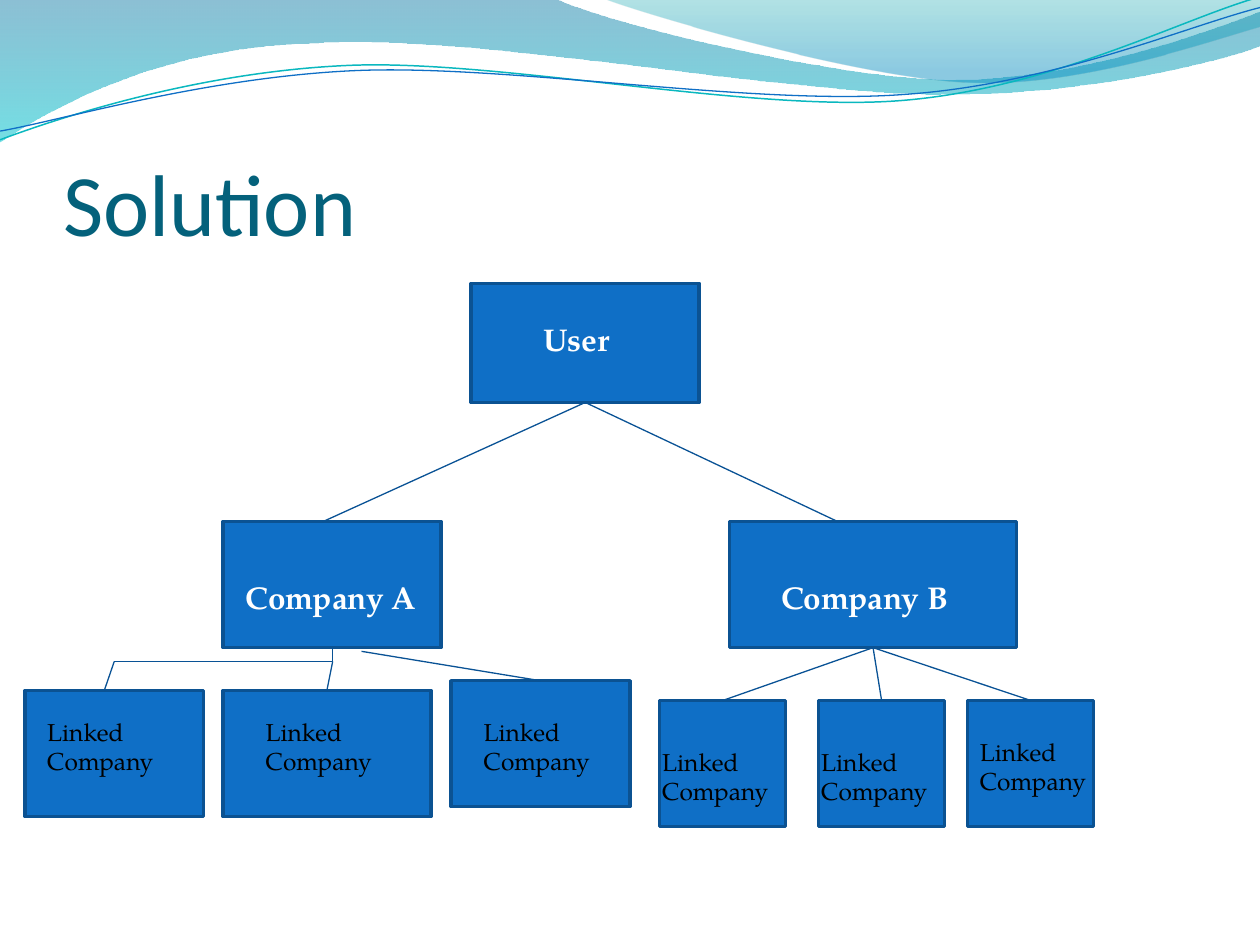
from lxml.etree import SubElement
from pptx import Presentation
from pptx.dml.color import RGBColor
from pptx.enum.shapes import MSO_CONNECTOR, MSO_SHAPE
from pptx.enum.text import MSO_ANCHOR, MSO_AUTO_SIZE, PP_ALIGN
from pptx.oxml.ns import qn
from pptx.util import Pt

BLUE = RGBColor(0x0F, 0x6F, 0xC6)
BOX_EDGE = RGBColor(0x0B, 0x52, 0x92)
LINK = RGBColor(0x09, 0x52, 0x95)
TEAL = RGBColor(0x0A, 0xB8, 0xBF)
TITLE_COLOR = RGBColor(0x04, 0x61, 0x7B)
WHITE = RGBColor(0xFF, 0xFF, 0xFF)
BLACK = RGBColor(0, 0, 0)
DEEP_SEA, AQUA = RGBColor(0, 0x74, 0xA1), RGBColor(0, 0xC6, 0xCF)
LAGOON, SKY = RGBColor(0, 0xA1, 0xA9), RGBColor(0, 0x8B, 0xBF)

TOP, BOTTOM = 0, 2

# Outlines: a start point, then one point for a line or three for a curve.
# Gradient stops: position, colour, opacity in percent.
BANDS = [
    ([(0, 0),
      [(317.2, -0.7)],
      [(342.7, 12.2), (478.1, 45.4), (545.8, 45.4)],
      [(614.2, 45.4), (689.8, 18.7), (720, 6.5)],
      [(720.7, 25.9)],
      [(707.8, 31.7), (626.4, 54.7), (537.1, 54)],
      [(447.8, 54), (275, 20.2), (185, 24.5)],
      [(92.9, 25.9), (33.1, 59.8), (-0.7, 81.4)]],
     [(0, DEEP_SEA, 45), (1, AQUA, 55)]),
    ([(344.9, -0.7),
      [(366.5, 7.9), (491, 44.6), (553.7, 46.8)],
      [(616.3, 49.7), (691.9, 23), (720, 15.1)],
      [(720, 0)]],
     [(0, LAGOON, 30), (0.8, SKY, 45)]),
]
WAVES = [
    ([(0, 79.9),
      [(34.6, 67), (113.8, 41), (199.4, 37.4)],
      [(284.4, 33.8), (427, 64.1), (513.4, 57.6)],
      [(599.8, 51.1), (675.4, 10.8), (718.6, -1.4)]], TEAL, 0.85),
    ([(0, 74.9),
      [(33.8, 69.1), (118.1, 43.9), (203.8, 40.3)],
      [(290.2, 36.7), (429.8, 60.5), (516.2, 54)],
      [(601.9, 48.2), (677.5, 15.1), (720, 4.3)]], BLUE, 0.75),
]

HEAD = {"size": Pt(18), "bold": True}
LEAF = {"size": Pt(14), "bold": False}
LINKED = "Linked Company"
# name: box, text, label frame
NODES = {
    "user": ((269.3, 162, 130.3, 68), "User", (303.3, 179.3, 73.4, 28.8)),
    "A": ((127.4, 298.1, 124.6, 72), "Company A", (133.2, 326.9, 130.3, 28.8)),
    "B": ((416.8, 298.1, 164.2, 72), "Company B", (439.2, 326.9, 118.8, 28.8)),
    "A1": ((14.2, 394.6, 102.2, 72), LINKED, (19.9, 406.1, 85, 41)),
    "A2": ((127.4, 394.6, 118.8, 72), LINKED, (144.7, 406.1, 85, 41)),
    "A3": ((257.8, 389, 102.2, 72), LINKED, (269.3, 406.1, 85, 41)),
    "B1": ((377, 400.3, 72, 72), LINKED, (371.3, 423.2, 85, 41)),
    "B2": ((467.8, 400.3, 72, 72), LINKED, (462.2, 423.2, 85, 41)),
    "B3": ((553, 400.3, 72, 72), LINKED, (552.8, 417.4, 85, 41)),
}
# Each end is a node name (bottom at the start, top at the end) or a free point.
LINKS = [
    ("user", (184.5, 298.1)), ("user", (478.8, 298.1)),
    ((190.1, 378), "A2"), ((206.6, 372.2), "A3"), ((65.3, 378), (59.6, 394.6)),
    ("B", "B1"), ("B", "B2"), ("B", "B3"),
]
ELBOW_START, ELBOW_END = (190.1, 370.1), (65.3, 378)


def add_outline(slide, outline, close):
    """Draw straight segments through all points, then turn each triple into a curve."""
    start, *segments = outline
    builder = slide.shapes.build_freeform(*map(Pt, start))
    points = [(Pt(x), Pt(y)) for segment in segments for x, y in segment]
    builder.add_line_segments(points, close=close)
    shape = builder.convert_to_shape()
    shape.shadow.inherit = False

    lines = iter(list(shape.element.spPr.iter(qn("a:lnTo"))))
    for segment in segments:
        parts = [next(lines) for _ in segment]
        if len(parts) == 3:
            outline_path = parts[0].getparent()
            curve = SubElement(outline_path, qn("a:cubicBezTo"))
            outline_path.replace(parts[0], curve)
            for part in parts:
                curve.append(part[0])
            for part in parts[1:]:
                outline_path.remove(part)
    return shape


def set_line(shape, color, width):
    shape.line.color.rgb = color
    shape.line.width = Pt(width)


def add_band(slide, outline, stops):
    band = add_outline(slide, outline, True)
    band.line.fill.background()
    band.fill.gradient()
    band.fill.gradient_angle = 270
    for stop, (position, color, _) in zip(band.fill.gradient_stops, stops):
        stop.position = position
        stop.color.rgb = color
    colors = list(band.element.spPr.iter(qn("a:srgbClr")))
    for color, (_, _, opacity) in zip(colors, stops):
        SubElement(color, qn("a:alpha"), val=str(opacity * 1000))


def add_link(slide, kind, start, end):
    link = slide.shapes.add_connector(kind, *map(Pt, start + end))
    set_line(link, LINK, 0.75)
    SubElement(link.element.spPr, qn("a:effectLst"))
    return link


def add_elbow(slide, start, end):
    """Go down from start, then left to end: a two-part elbow turned by 90 degrees."""
    middle_x, middle_y = (start[0] + end[0]) / 2, (start[1] + end[1]) / 2
    half_width, half_height = (end[1] - start[1]) / 2, (start[0] - end[0]) / 2
    elbow = add_link(slide, MSO_CONNECTOR.ELBOW,
                     (middle_x - half_width, middle_y - half_height),
                     (middle_x + half_width, middle_y + half_height))
    elbow.element.spPr.find(qn("a:prstGeom")).set("prst", "bentConnector2")
    elbow.element.spPr.find(qn("a:xfrm")).set("rot", str(90 * 60000))


def add_box(slide, frame):
    box = slide.shapes.add_shape(MSO_SHAPE.RECTANGLE, *map(Pt, frame))
    box.shadow.inherit = False
    box.fill.solid()
    box.fill.fore_color.rgb = BLUE
    set_line(box, BOX_EDGE, 2)
    return box


def write(frame, text, color, formats):
    frame.word_wrap = True
    para = frame.paragraphs[0]
    para.alignment = PP_ALIGN.LEFT
    span = para.add_run()
    span.text = text
    span.font.color.rgb = color
    for name, value in formats.items():
        setattr(span.font, name, value)


def add_title(slide, text):
    title = slide.shapes.title
    slide.shapes.element.append(title.element)
    title.left, title.top, title.width, title.height = map(Pt, (36, 55.4, 648, 90))
    frame = title.text_frame
    layout = {"margin_left": 0, "margin_top": Pt(3.6), "margin_right": 0, "margin_bottom": 0,
              "vertical_anchor": MSO_ANCHOR.BOTTOM, "auto_size": MSO_AUTO_SIZE.NONE}
    for name, value in layout.items():
        setattr(frame, name, value)
    write(frame, text, TITLE_COLOR, {"size": Pt(50), "name": "Calibri"})


def main():
    deck = Presentation()
    deck.slide_width, deck.slide_height = Pt(720), Pt(540)
    slide = deck.slides.add_slide(deck.slide_layouts[5])

    for outline, stops in BANDS:
        add_band(slide, outline, stops)
    for outline, color, width in WAVES:
        wave = add_outline(slide, outline, False)
        wave.fill.background()
        set_line(wave, color, width)
    add_title(slide, "Solution")

    boxes = {name: add_box(slide, frame) for name, (frame, _, _) in NODES.items()}
    for start, end in LINKS:
        link = add_link(slide, MSO_CONNECTOR.STRAIGHT,
                        (0, 0) if start in boxes else start, (0, 0) if end in boxes else end)
        if start in boxes:
            link.begin_connect(boxes[start], BOTTOM)
        if end in boxes:
            link.end_connect(boxes[end], TOP)
    add_elbow(slide, ELBOW_START, ELBOW_END)

    for _, text, frame in NODES.values():
        label = slide.shapes.add_textbox(*map(Pt, frame))
        label.text_frame.auto_size = MSO_AUTO_SIZE.SHAPE_TO_FIT_TEXT
        color, formats = (BLACK, LEAF) if text == LINKED else (WHITE, HEAD)
        write(label.text_frame, text, color, {"name": "TeX Gyre Pagella", **formats})

    deck.save("out.pptx")


if __name__ == "__main__":
    main()
